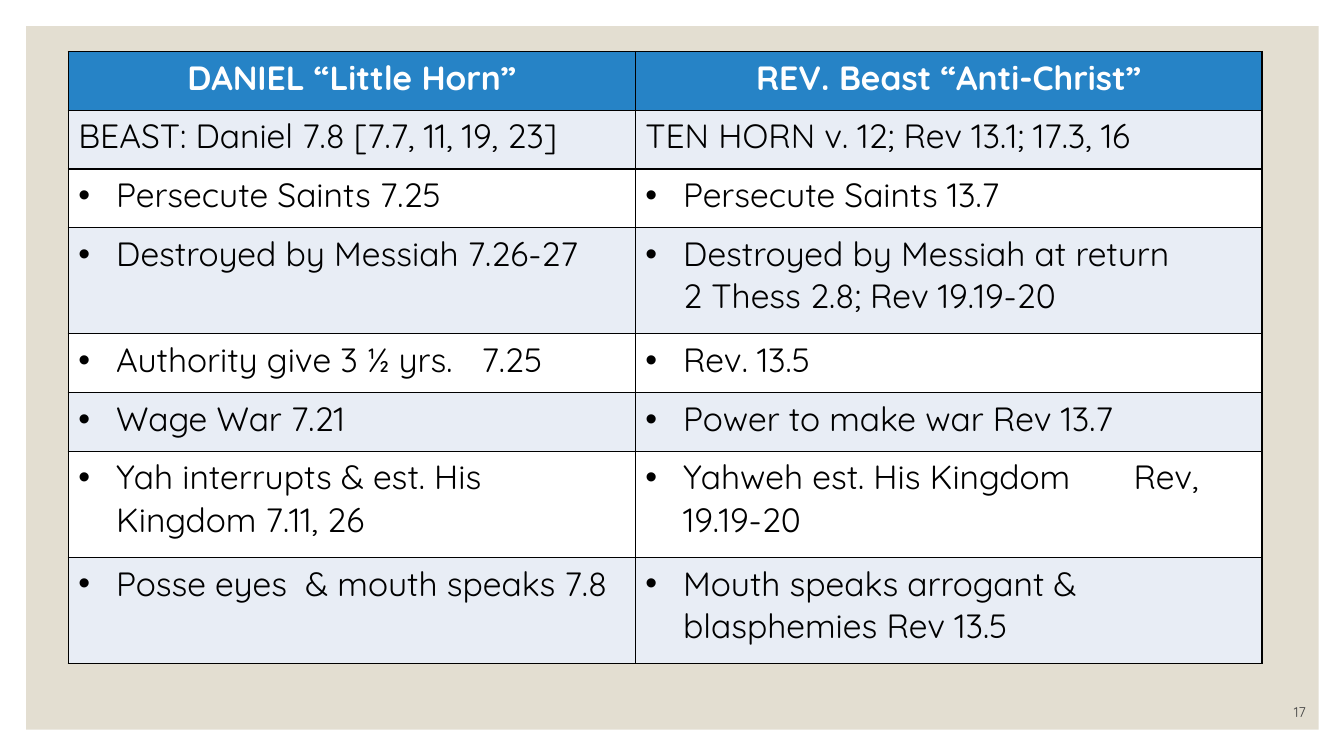
from lxml.etree import SubElement
from pptx import Presentation
from pptx.dml.color import RGBColor
from pptx.enum.shapes import MSO_SHAPE
from pptx.enum.text import MSO_ANCHOR, PP_ALIGN
from pptx.oxml.ns import qn
from pptx.util import Emu, Pt

PX = 9525
FONT = "Quicksand"
INDENT = 36
COLORS = {
    "panel": "E3DED1",
    "header": "2683C6",
    "band": "E8EDF5",
    "white": "FFFFFF",
    "black": "000000",
    "number": "404040",
}
COLUMNS = (540, 597)
SHORT_ROW, TALL_ROW = 56, 101
TALL_ROWS = (3, 6, 7)
BANDED_ROWS = (1, 3, 5, 7)
# Position of the tab stop in each bullet that has one, by row and column
TAB_STOPS = {(4, 0): 348, (6, 1): 465}
COMPARISON = (
    ("DANIEL “Little Horn”", "REV. Beast “Anti-Christ”"),
    ("BEAST: Daniel 7.8 [7.7, 11, 19, 23]", "TEN HORN v. 12; Rev 13.1; 17.3, 16"),
    ("Persecute Saints 7.25", "Persecute Saints 13.7"),
    ("Destroyed by Messiah 7.26-27",
     "Destroyed by Messiah at return\n2 Thess 2.8; Rev 19.19-20"),
    ("Authority give 3 ½ yrs.\t7.25", "Rev. 13.5"),
    ("Wage War 7.21", "Power to make war Rev 13.7"),
    ("Yah interrupts & est. His Kingdom 7.11, 26",
     "Yahweh est. His Kingdom\tRev, 19.19-20"),
    ("Posse eyes  & mouth speaks 7.8",
     "Mouth speaks arrogant & blasphemies Rev 13.5"),
)


def px(length):
    return Emu(length * PX)


def color(name):
    return RGBColor.from_string(COLORS[name])


def paint(item, name):
    item.fill.solid()
    item.fill.fore_color.rgb = color(name)


def add_span(para, text, size, color_name, bold=False):
    span = para.add_run()
    span.text = text
    span.font.name = FONT
    span.font.size = Pt(size)
    span.font.bold = bold
    span.font.color.rgb = color(color_name)


def indent_para(para, bullet, tab_stop=None):
    """Indent a paragraph, hanging a bullet and setting a tab stop if asked."""
    properties = para._p.get_or_add_pPr()
    properties.set("marL", str(px(INDENT)))
    properties.set("indent", str(px(-INDENT if bullet else 0)))
    if bullet:
        SubElement(properties, qn("a:buFont"), typeface="Arial")
        SubElement(properties, qn("a:buChar"), char="•")
    else:
        SubElement(properties, qn("a:buNone"))
    if tab_stop:
        tabs = SubElement(properties, qn("a:tabLst"))
        SubElement(tabs, qn("a:tab"), pos=str(px(tab_stop)), algn="l")


def add_borders(cell):
    """Draw the four edges; they must come before the cell's fill."""
    properties = cell._tc.get_or_add_tcPr()
    for edge in ("a:lnL", "a:lnR", "a:lnT", "a:lnB"):
        line = SubElement(properties, qn(edge), w=str(Pt(1)))
        fill = SubElement(line, qn("a:solidFill"))
        SubElement(fill, qn("a:srgbClr"), val=COLORS["black"])


def fill_cell(cell, text, row, column):
    header = row == 0
    add_borders(cell)
    paint(cell, "header" if header else "band" if row in BANDED_ROWS else "white")
    frame = cell.text_frame
    for index, line in enumerate(text.split("\n")):
        para = frame.add_paragraph() if index else frame.paragraphs[0]
        if header:
            para.alignment = PP_ALIGN.CENTER
        elif row > 1:
            indent_para(para, index == 0, TAB_STOPS.get((row, column)))
        add_span(para, line, 24, "white" if header else "black", header)


def add_panel(page, left, top, width, height):
    panel = page.shapes.add_shape(
        MSO_SHAPE.RECTANGLE, px(left), px(top), px(width), px(height))
    panel.shadow.inherit = False
    paint(panel, "panel")
    panel.line.fill.background()


def add_comparison(page, left, top):
    heights = [TALL_ROW if row in TALL_ROWS else SHORT_ROW
               for row in range(len(COMPARISON))]
    table = page.shapes.add_table(
        len(heights), len(COLUMNS), px(left), px(top),
        px(sum(COLUMNS)), px(sum(heights))).table
    table.horz_banding = False
    for column, width in zip(table.columns, COLUMNS):
        column.width = px(width)
    for row, texts in enumerate(COMPARISON):
        table.rows[row].height = px(heights[row])
        for column, text in enumerate(texts):
            fill_cell(table.cell(row, column), text, row, column)


def add_page_number(page, left, top, width, height):
    box = page.shapes.add_textbox(px(left), px(top), px(width), px(height))
    frame = box.text_frame
    frame.word_wrap = True
    frame.vertical_anchor = MSO_ANCHOR.BOTTOM
    para = frame.paragraphs[0]
    para.alignment = PP_ALIGN.RIGHT
    add_span(para, "17", 10, "number")


def main():
    deck = Presentation()
    deck.slide_width, deck.slide_height = px(1280), px(720)
    page = deck.slides.add_slide(deck.slide_layouts[6])
    paint(page.background, "white")
    add_panel(page, 25, 25, 1231, 670)
    add_page_number(page, 1099, 662, 154, 29)
    add_comparison(page, 65, 49)
    deck.save("out.pptx")


if __name__ == "__main__":
    main()
